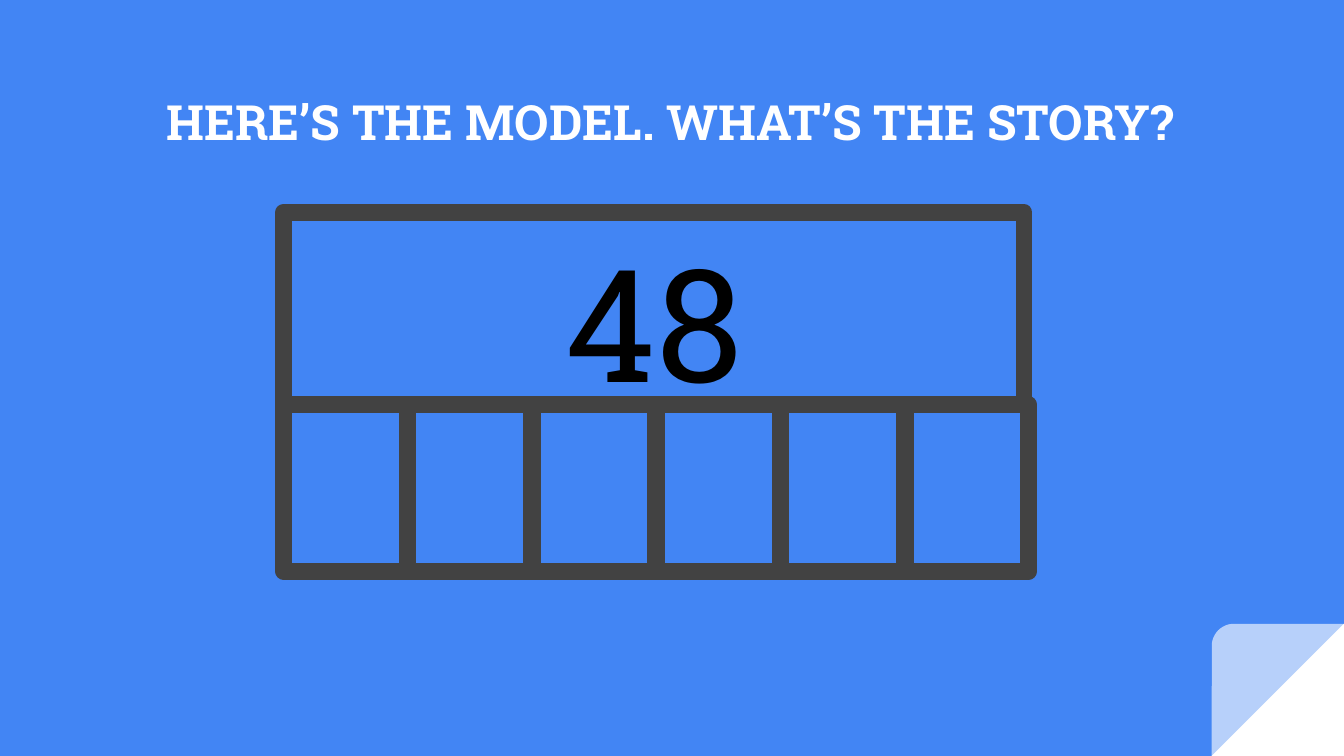
from dataclasses import dataclass

from lxml import etree
from pptx import Presentation
from pptx.dml.color import RGBColor
from pptx.enum.shapes import MSO_SHAPE
from pptx.enum.text import MSO_ANCHOR, MSO_AUTO_SIZE, PP_ALIGN
from pptx.oxml.ns import qn
from pptx.util import Pt

RECT = MSO_SHAPE.RECTANGLE
WEDGE = MSO_SHAPE.RIGHT_TRIANGLE
FOLD = MSO_SHAPE.ROUND_1_RECTANGLE
TOP = MSO_ANCHOR.TOP
BOTTOM = MSO_ANCHOR.BOTTOM
GROW = MSO_AUTO_SIZE.SHAPE_TO_FIT_TEXT
FIXED = MSO_AUTO_SIZE.NONE
CENTER = PP_ALIGN.CENTER


@dataclass(frozen=True)
class Theme:
    back: str = "4285F4"
    white: str = "FFFFFF"
    frame: str = "424242"
    ink: str = "000000"
    font: str = "Roboto Slab"
    title: int = 26
    total: int = 84
    line: int = 9


def write(frame, text, size, color, font, bold=False):
    para = frame.paragraphs[0]
    para.alignment = CENTER
    run = para.add_run()
    run.text = text
    run.font.size = Pt(size)
    run.font.name = font
    run.font.bold = bold
    run.font.color.rgb = RGBColor.from_string(color)


class Board:
    def __init__(self, slide, theme):
        self.slide = slide
        self.theme = theme
        fill = slide.background.fill
        fill.solid()
        fill.fore_color.rgb = RGBColor.from_string(theme.back)

    def shape(self, kind, box):
        item = self.slide.shapes.add_shape(kind, *map(Pt, box))
        item.shadow.inherit = False
        return item

    def corner(self, kind, box, alpha=100):
        item = self.shape(kind, box)
        item.fill.solid()
        item.fill.fore_color.rgb = RGBColor.from_string(self.theme.white)
        item.line.fill.background()
        item.element.spPr.find(qn("a:xfrm")).set("flipH", "1")
        if alpha < 100:
            color = item.element.spPr.find(qn("a:solidFill"))[0]
            etree.SubElement(color, qn("a:alpha"), val=str(alpha * 1000))
        return item

    def bar(self, box):
        item = self.shape(RECT, box)
        item.fill.background()
        item.line.color.rgb = RGBColor.from_string(self.theme.frame)
        item.line.width = Pt(self.theme.line)

    def label(self, box, text, anchor=TOP, fit=FIXED, **style):
        frame = self.slide.shapes.add_textbox(*map(Pt, box)).text_frame
        frame.word_wrap = True
        frame.auto_size = fit
        frame.vertical_anchor = anchor
        frame.margin_left = frame.margin_right = Pt(7.2)
        frame.margin_top = frame.margin_bottom = Pt(7.2)
        write(frame, text, font=self.theme.font, **style)


def main():
    deck = Presentation()
    deck.slide_width, deck.slide_height = Pt(720), Pt(405)
    theme = Theme()
    board = Board(deck.slides.add_slide(deck.slide_layouts[6]), theme)

    side = 70.8
    nook = (720 - side, 405 - side, side, side)
    board.corner(WEDGE, nook)
    board.corner(FOLD, nook, alpha=62).adjustments[0] = 0.167

    board.label((2.9, 21.6, 712.8, 66.2), "HERE’S THE MODEL. WHAT’S THE STORY?",
                anchor=BOTTOM, size=theme.title, color=theme.white, bold=True)

    left, top, high = 151.9, 113.8, 103
    board.bar((left, top, 396.7, high))
    for col in range(6):
        board.bar((left + col * 66.6, top + high, 66.2, 89.2))
    board.label((156.2, top, 388.8, 116.6), "48", fit=GROW,
                size=theme.total, color=theme.ink)

    deck.save("out.pptx")


if __name__ == "__main__":
    main()
